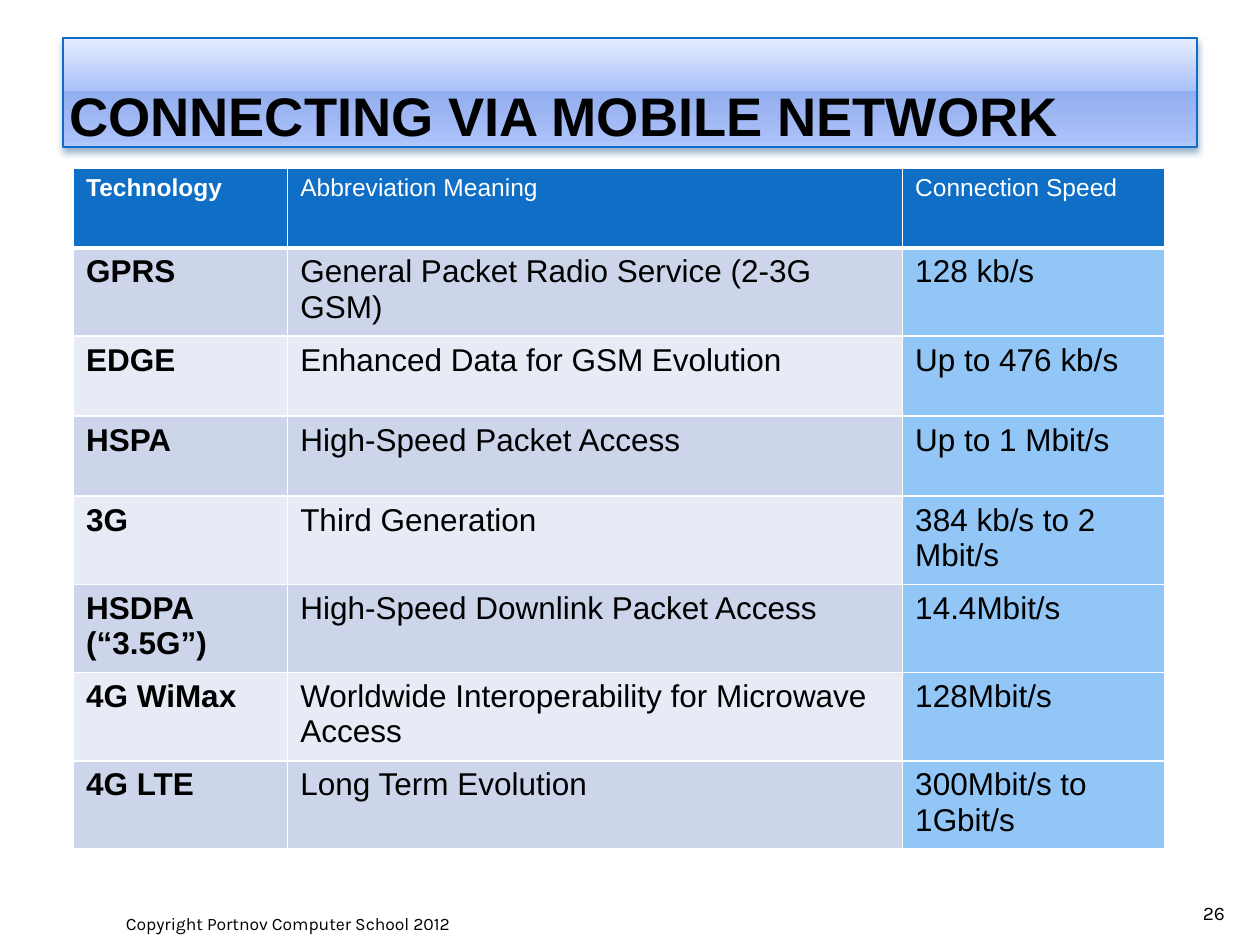
from lxml import etree
from pptx import Presentation
from pptx.dml.color import RGBColor
from pptx.enum.shapes import MSO_SHAPE
from pptx.enum.text import MSO_ANCHOR, PP_ALIGN
from pptx.oxml import parse_xml
from pptx.oxml.ns import nsdecls, qn
from pptx.util import Pt

RECTANGLE = MSO_SHAPE.RECTANGLE
BOTTOM = MSO_ANCHOR.BOTTOM
LEFT, RIGHT = PP_ALIGN.LEFT, PP_ALIGN.RIGHT

BLUE, WHITE, BLACK = "0F6FC6", "FFFFFF", "000000"
SPEED_FILL = "91C6F7"
ROW_FILLS = ("CCD5EA", "E7EBF5")
TITLE_GRADIENT = [(0, "E6EDFF"), (49, "A9C0F9"), (49, "93AEEE"),
                  (92, "A9C0F9"), (100, "B9CBF8")]

COLUMN_WIDTHS = (122.4, 351.4, 149.8)
ROW_HEIGHTS = (45.7, 45.7, 45.7, 45.7, 45.7, 49, 49, 45.7)
TECHNOLOGIES = [
    ("Technology", "Abbreviation Meaning", "Connection Speed"),
    ("GPRS", "General Packet Radio Service (2-3G GSM)", "128 kb/s"),
    ("EDGE", "Enhanced Data for GSM Evolution", "Up to 476 kb/s"),
    ("HSPA", "High-Speed Packet Access", "Up to 1 Mbit/s"),
    ("3G", "Third Generation", "384 kb/s to 2 Mbit/s"),
    ("HSDPA\n(“3.5G”)", "High-Speed Downlink Packet Access", "14.4Mbit/s"),
    ("4G WiMax", "Worldwide Interoperability for Microwave Access", "128Mbit/s"),
    ("4G LTE", "Long Term Evolution", "300Mbit/s to 1Gbit/s"),
]


def rgb(color):
    return RGBColor.from_string(color)


def write(frame, text, size, font="Arial", color=BLACK, bold=False, align=LEFT):
    """Fill a text frame, one paragraph for each line of text."""
    frame.word_wrap = True
    for index, line in enumerate(text.split("\n")):
        paragraph = frame.add_paragraph() if index else frame.paragraphs[0]
        paragraph.alignment = align
        run = paragraph.add_run()
        run.text = line
        run.font.size = Pt(size)
        run.font.name = font
        run.font.bold = bold
        run.font.color.rgb = rgb(color)


def anchor_bottom(frame, side_margin):
    frame.vertical_anchor = BOTTOM
    frame.margin_left = frame.margin_right = Pt(side_margin)
    frame.margin_top = frame.margin_bottom = 0


def add_footer(slide, text, left, top, width, height, size, side_margin):
    box = slide.shapes.add_textbox(Pt(left), Pt(top), Pt(width), Pt(height))
    anchor_bottom(box.text_frame, side_margin)
    write(box.text_frame, text, size, font="Karla", align=RIGHT)


def set_gradient(shape, stops, angle):
    shape.fill.gradient()
    shape.fill.gradient_angle = -angle % 360
    stop_list = shape.fill._fill._gradFill.find(qn("a:gsLst"))
    for stop in list(stop_list):
        stop_list.remove(stop)
    for position, color in stops:
        stop = etree.SubElement(stop_list, qn("a:gs"), pos=str(position * 1000))
        etree.SubElement(stop, qn("a:srgbClr"), val=color)


def set_shadow(shape, color, opacity, blur, distance):
    """Cast a soft shadow straight down."""
    shape.shadow.inherit = False
    effects = shape._element.spPr.find(qn("a:effectLst"))
    effects.append(parse_xml(
        f'<a:outerShdw {nsdecls("a")} blurRad="{Pt(blur)}" dist="{Pt(distance)}" '
        f'dir="5400000" rotWithShape="0"><a:srgbClr val="{color}">'
        f'<a:alpha val="{opacity * 1000}"/></a:srgbClr></a:outerShdw>'))


def add_title(slide, text):
    banner = slide.shapes.add_shape(RECTANGLE, Pt(36), Pt(21.6), Pt(648), Pt(62.6))
    set_gradient(banner, TITLE_GRADIENT, 90)
    banner.line.color.rgb = rgb(BLUE)
    banner.line.width = Pt(0.9)
    set_shadow(banner, "00427E", opacity=38, blur=4, distance=2)
    anchor_bottom(banner.text_frame, 3.6)
    write(banner.text_frame, text, 31, bold=True)


def set_borders(cell, bottom_width):
    widths = {"lnL": 1, "lnR": 1, "lnT": 1, "lnB": bottom_width}
    properties = cell._tc.get_or_add_tcPr()
    for index, (side, width) in enumerate(widths.items()):
        properties.insert(index, parse_xml(
            f'<a:{side} {nsdecls("a")} w="{Pt(width)}"><a:solidFill>'
            f'<a:srgbClr val="{WHITE}"/></a:solidFill></a:{side}>'))


def add_technology_table(slide):
    table = slide.shapes.add_table(
        len(TECHNOLOGIES), len(COLUMN_WIDTHS), Pt(42), Pt(96),
        Pt(sum(COLUMN_WIDTHS)), Pt(sum(ROW_HEIGHTS))).table
    for column, width in zip(table.columns, COLUMN_WIDTHS):
        column.width = Pt(width)
    for row_index, entries in enumerate(TECHNOLOGIES):
        is_header = row_index == 0
        table.rows[row_index].height = Pt(ROW_HEIGHTS[row_index])
        for column_index, entry in enumerate(entries):
            cell = table.cell(row_index, column_index)
            if is_header:
                fill = BLUE
            elif column_index == 2:
                fill = SPEED_FILL
            else:
                fill = ROW_FILLS[(row_index - 1) % 2]
            cell.fill.solid()
            cell.fill.fore_color.rgb = rgb(fill)
            set_borders(cell, bottom_width=3 if is_header else 1)
            write(cell.text_frame, entry, 14 if is_header else 18,
                  color=WHITE if is_header else BLACK, bold=column_index == 0)


def main():
    deck = Presentation()
    deck.slide_width, deck.slide_height = Pt(720), Pt(540)
    slide = deck.slides.add_slide(deck.slide_layouts[6])
    add_footer(slide, "Copyright Portnov Computer School 2012",
               36, 505, 228, 28.8, size=10, side_margin=7.2)
    add_footer(slide, "26", 654, 510, 46, 18, size=11, side_margin=0)
    add_title(slide, "CONNECTING VIA MOBILE NETWORK")
    add_technology_table(slide)
    deck.save("out.pptx")


if __name__ == "__main__":
    main()
